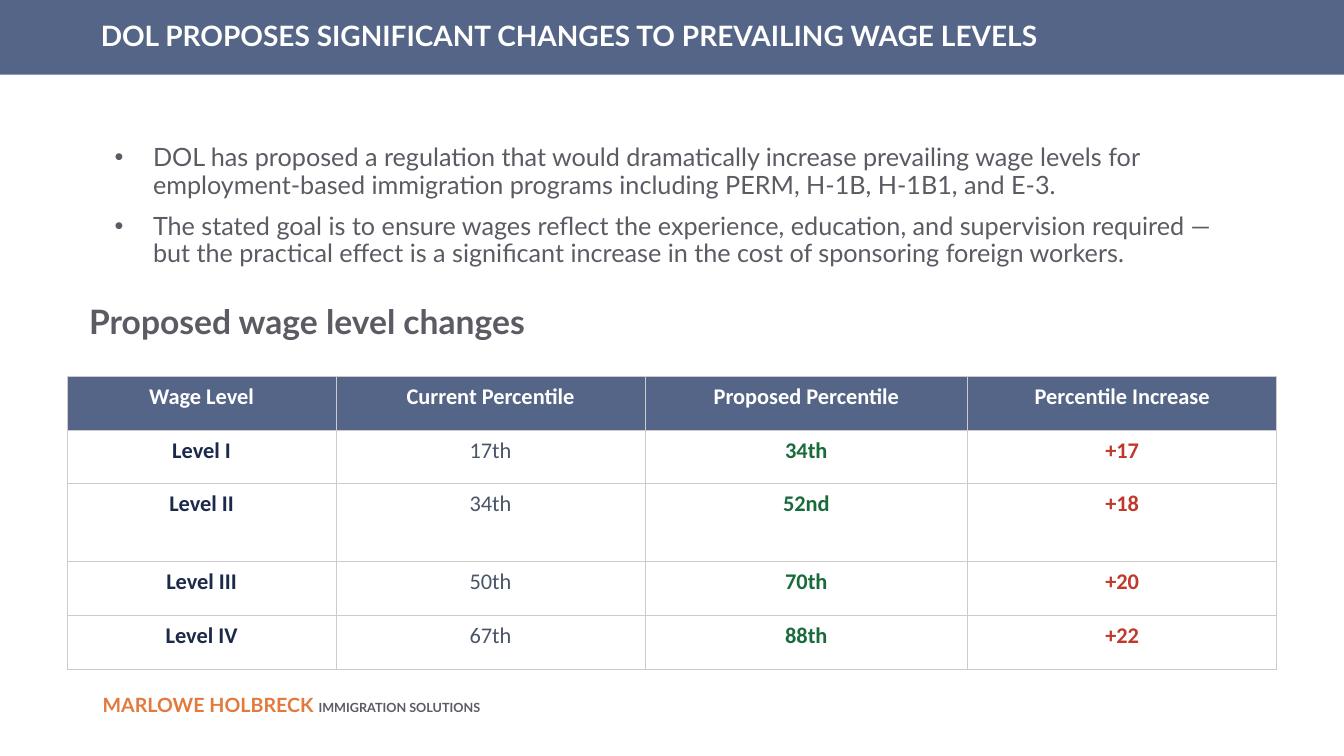
from dataclasses import dataclass

from lxml.etree import SubElement
from pptx import Presentation
from pptx.dml.color import RGBColor
from pptx.enum.shapes import MSO_SHAPE
from pptx.enum.text import MSO_ANCHOR, PP_ALIGN
from pptx.oxml.ns import qn
from pptx.slide import Slide
from pptx.table import Table, _Cell
from pptx.text.text import Font, TextFrame, _Paragraph
from pptx.util import Inches, Pt

SLATE = RGBColor(0x54, 0x65, 0x87)
GREY = RGBColor(0x5A, 0x5B, 0x63)
ORANGE = RGBColor(0xE2, 0x7A, 0x3D)
NAVY = RGBColor(0x1B, 0x2A, 0x4A)
STEEL = RGBColor(0x4A, 0x55, 0x68)
GREEN = RGBColor(0x1A, 0x6B, 0x3C)
RED = RGBColor(0xC0, 0x39, 0x2B)
BORDER = RGBColor(0xCC, 0xCC, 0xCC)
WHITE = RGBColor(0xFF, 0xFF, 0xFF)

# The slide is a grid of square units, 15 to the inch
SLIDE_COLUMNS, SLIDE_ROWS = 200, 112.5
HEADING_FONT, TABLE_FONT = "Lato", "Calibri"

BULLETS = (
    "DOL has proposed a regulation that would dramatically increase prevailing wage levels for "
    "employment-based immigration programs including PERM, H-1B, H-1B1, and E-3.",
    "The stated goal is to ensure wages reflect the experience, education, and supervision required — "
    "but the practical effect is a significant increase in the cost of sponsoring foreign workers.",
)


@dataclass(frozen=True)
class Area:
    column: float
    row: float
    columns: float
    rows: float

    def lengths(self) -> tuple[int, int, int, int]:
        return units(self.column), units(self.row), units(self.columns), units(self.rows)


@dataclass(frozen=True)
class WageColumn:
    heading: str
    width: float
    color: RGBColor
    bold: bool
    values: tuple[str, ...]


WAGE_COLUMNS = (
    WageColumn("Wage Level", 40, NAVY, True, ("Level I", "Level II", "Level III", "Level IV")),
    WageColumn("Current Percentile", 46, STEEL, False, ("17th", "34th", "50th", "67th")),
    WageColumn("Proposed Percentile", 48, GREEN, True, ("34th", "52nd", "70th", "88th")),
    WageColumn("Percentile Increase", 46, RED, True, ("+17", "+18", "+20", "+22")),
)
ROW_HEIGHTS = (8, 8, 11.6, 8, 8)

TITLE_AREA = Area(0, 0, SLIDE_COLUMNS, 11.1)
BULLET_AREA = Area(13.8, 20.85, 172.5, 76.65)
SUBHEADING_AREA = Area(10, 44.7, 172.5, 9.15)
TABLE_AREA = Area(10, 56, sum(c.width for c in WAGE_COLUMNS), sum(ROW_HEIGHTS))
FOOTER_AREA = Area(13.8, 102.45, 99, 9.6)


def units(count: float) -> int:
    return Inches(count / 15)


def style(font: Font, name: str, size: float, color: RGBColor, bold: bool) -> None:
    font.name, font.size, font.bold = name, Pt(size), bold
    font.color.rgb = color


def add_text_frame(slide: Slide, area: Area) -> TextFrame:
    frame = slide.shapes.add_textbox(*area.lengths()).text_frame
    frame.word_wrap = True
    return frame


def indent(paragraph: _Paragraph, left: float, first_line: float) -> None:
    properties = paragraph._p.get_or_add_pPr()
    properties.set("marL", str(Inches(left)))
    properties.set("indent", str(Inches(first_line)))


def add_bullet(paragraph: _Paragraph, color: RGBColor) -> None:
    properties = paragraph._p.get_or_add_pPr()
    bullet_color = SubElement(properties, qn("a:buClr"))
    SubElement(bullet_color, qn("a:srgbClr"), val=str(color))
    SubElement(properties, qn("a:buFont"), typeface="Arial")
    SubElement(properties, qn("a:buChar"), char="•")


def add_title(slide: Slide) -> None:
    banner = slide.shapes.add_shape(MSO_SHAPE.RECTANGLE, *TITLE_AREA.lengths())
    banner.shadow.inherit = False
    banner.fill.solid()
    banner.fill.fore_color.rgb = SLATE
    banner.line.fill.background()
    frame = banner.text_frame
    frame.margin_left = frame.margin_right = units(15)
    frame.vertical_anchor = MSO_ANCHOR.MIDDLE
    frame.text = "DOL PROPOSES SIGNIFICANT CHANGES TO PREVAILING WAGE LEVELS"
    title = frame.paragraphs[0]
    title.alignment = PP_ALIGN.LEFT
    title.line_spacing = 0.9
    style(title.runs[0].font, HEADING_FONT, 20, WHITE, True)


def add_bullets(slide: Slide) -> None:
    frame = add_text_frame(slide, BULLET_AREA)
    frame.text = "\n".join(BULLETS)
    for position, point in enumerate(frame.paragraphs):
        indent(point, 0.5, -0.38)
        point.line_spacing = 0.9
        if position:
            point.space_before = Pt(10)
        add_bullet(point, GREY)
        style(point.runs[0].font, HEADING_FONT, 18, GREY, False)


def add_subheading(slide: Slide) -> None:
    frame = add_text_frame(slide, SUBHEADING_AREA)
    frame.text = "Proposed wage level changes"
    subheading = frame.paragraphs[0]
    indent(subheading, 0.12, 0)
    subheading.line_spacing = 0.9
    style(subheading.runs[0].font, HEADING_FONT, 24, GREY, True)


def add_borders(cell: _Cell) -> None:
    properties = cell._tc.get_or_add_tcPr()
    for side in ("lnL", "lnR", "lnT", "lnB"):
        line = SubElement(properties, qn(f"a:{side}"), w=str(Pt(0.5)))
        fill = SubElement(line, qn("a:solidFill"))
        SubElement(fill, qn("a:srgbClr"), val=str(BORDER))


def fill_cell(cell: _Cell, text: str, fill: RGBColor, color: RGBColor, bold: bool) -> None:
    add_borders(cell)
    cell.fill.solid()
    cell.fill.fore_color.rgb = fill
    cell.margin_left = cell.margin_right = units(2)
    cell.margin_top = cell.margin_bottom = units(1)
    cell.text = text
    entry = cell.text_frame.paragraphs[0]
    entry.alignment = PP_ALIGN.CENTER
    style(entry.runs[0].font, TABLE_FONT, 16, color, bold)


def add_wage_table(slide: Slide) -> None:
    wages: Table = slide.shapes.add_table(
        len(ROW_HEIGHTS), len(WAGE_COLUMNS), *TABLE_AREA.lengths()
    ).table
    wages.horz_banding = False
    for row, height in zip(wages.rows, ROW_HEIGHTS):
        row.height = units(height)
    for column, wage in enumerate(WAGE_COLUMNS):
        wages.columns[column].width = units(wage.width)
        fill_cell(wages.cell(0, column), wage.heading, SLATE, WHITE, True)
        for row, value in enumerate(wage.values, start=1):
            fill_cell(wages.cell(row, column), value, WHITE, wage.color, wage.bold)


def add_footer(slide: Slide) -> None:
    signature = add_text_frame(slide, FOOTER_AREA).paragraphs[0]
    for text, size, color in (
        ("MARLOWE HOLBRECK ", 14, ORANGE),
        ("IMMIGRATION SOLUTIONS", 9, GREY),
    ):
        part = signature.add_run()
        part.text = text
        style(part.font, HEADING_FONT, size, color, True)


def main() -> None:
    presentation = Presentation()
    presentation.slide_width = units(SLIDE_COLUMNS)
    presentation.slide_height = units(SLIDE_ROWS)
    slide = presentation.slides.add_slide(presentation.slide_layouts[6])
    add_footer(slide)
    add_title(slide)
    add_bullets(slide)
    add_wage_table(slide)
    add_subheading(slide)
    presentation.save("out.pptx")


if __name__ == "__main__":
    main()
